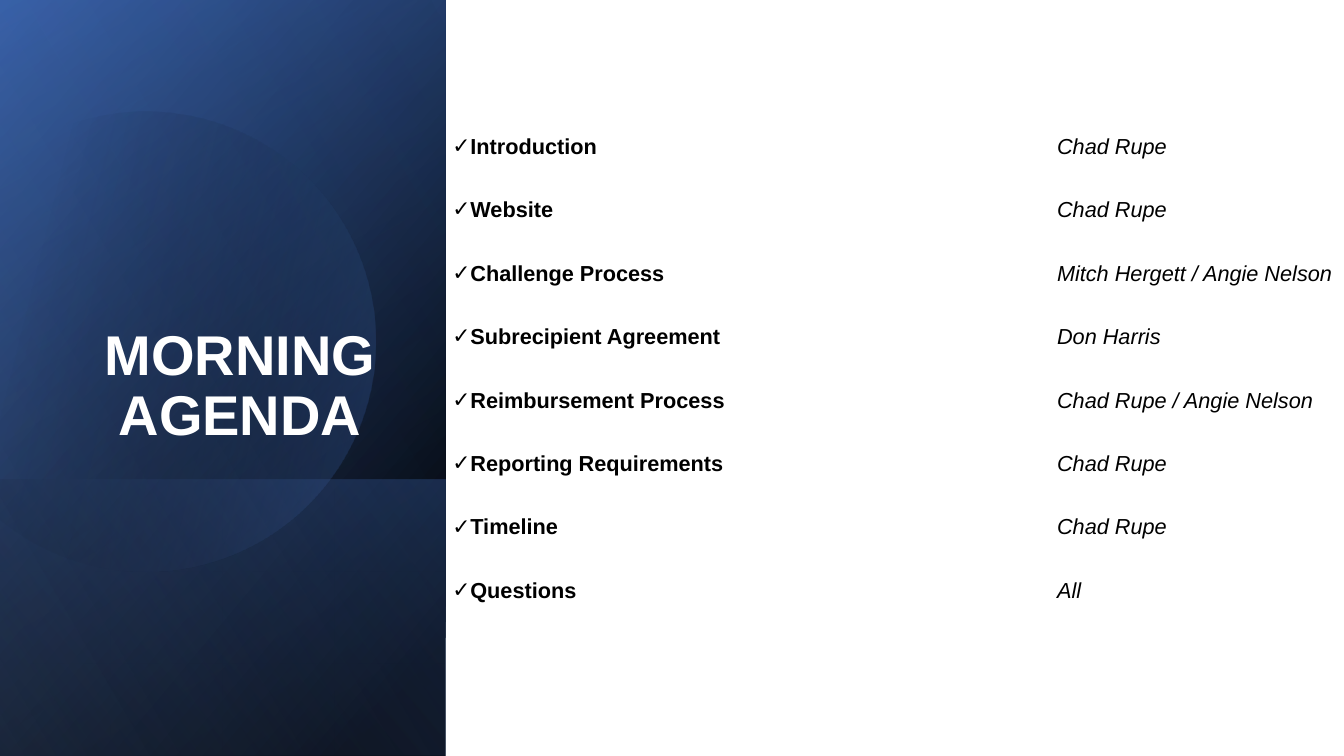
from math import cos, radians, sin, tan

from pptx import Presentation
from pptx.dml.color import RGBColor
from pptx.enum.shapes import MSO_SHAPE
from pptx.enum.text import MSO_ANCHOR, PP_ALIGN
from pptx.oxml.ns import qn
from pptx.oxml.xmlchemy import OxmlElement
from pptx.util import Cm, Pt

COLORS = {
    "black": "000000",
    "white": "FFFFFF",
    "navy": "2F5597",
    "blue": "4472C4",
    "pale": "8FAADC",
}
FONT = "Arial"
AGENDA = [
    ("Introduction", "Chad Rupe"),
    ("Website", "Chad Rupe"),
    ("Challenge Process", "Mitch Hergett / Angie Nelson"),
    ("Subrecipient Agreement", "Don Harris"),
    ("Reimbursement Process", "Chad Rupe / Angie Nelson"),
    ("Reporting Requirements", "Chad Rupe"),
    ("Timeline", "Chad Rupe"),
    ("Questions", "All"),
]


def add_child(parent, tag, **attributes):
    child = OxmlElement(tag)
    for name, value in attributes.items():
        child.set(name, str(value))
    parent.append(child)
    return child


def fill_gradient(sp, stops, angle):
    """Fill with two (percent, colour, opacity percent) stops; angle is clockwise."""
    sp.shadow.inherit = False
    sp.line.fill.background()
    sp.fill.gradient()
    sp.fill.gradient_angle = 360 - angle
    for stop, (percent, color, _) in zip(sp.fill.gradient_stops, stops):
        stop.position = percent / 100
        stop.color.rgb = RGBColor.from_string(COLORS[color])
    tints = sp._element.spPr.iter(qn("a:srgbClr"))
    for tint, (_, _, opacity) in zip(tints, stops):
        if opacity < 100:
            add_child(tint, "a:alpha", val=opacity * 1000)


def add_backdrop(slide, box):
    sp = slide.shapes.add_shape(MSO_SHAPE.RECTANGLE, *map(Cm, box))
    sp.shadow.inherit = False
    sp.line.fill.background()
    sp.fill.solid()
    sp.fill.fore_color.rgb = RGBColor.from_string(COLORS["white"])


def add_panel(slide, box, stops, angle):
    """Fill the box with a mirrored rectangle turned by a quarter."""
    left, top, width, height = box
    shift = (width - height) / 2
    sp = slide.shapes.add_shape(MSO_SHAPE.RECTANGLE, Cm(left + shift),
                                Cm(top - shift), Cm(height), Cm(width))
    sp.rotation = 90
    sp._element.spPr.find(qn("a:xfrm")).set("flipH", "1")
    fill_gradient(sp, stops, angle)


def arc_points(center, radius, start, end):
    """Give the two control points and the end point of a Bézier arc."""
    pull = 4 / 3 * tan(radians(end - start) / 4)

    def place(angle, along):
        a = radians(angle)
        return (center[0] + radius * (cos(a) - along * sin(a)),
                center[1] + radius * (sin(a) + along * cos(a)))

    return [place(start, pull), place(end, -pull), place(end, 0)]


def add_cut_disc(slide, center, radius, stops, angle):
    """Draw a disc that is cut off by the left edge of the slide."""
    turns = [242, 270, 360, 450, 510]
    points = [p for start, end in zip(turns, turns[1:])
              for p in arc_points(center, radius, start, end)]
    first = arc_points(center, radius, 0, turns[0])[-1]
    builder = slide.shapes.build_freeform(
        *(round(v * 1000) for v in first), scale=Cm(1) / 1000)
    builder.add_line_segments(
        [(round(x * 1000), round(y * 1000)) for x, y in points], close=True)
    sp = builder.convert_to_shape()
    lines = list(sp._element.iter(qn("a:lnTo")))
    for i in range(0, len(points), 3):
        curve = OxmlElement("a:cubicBezTo")
        lines[i].addprevious(curve)
        for line in lines[i:i + 3]:
            curve.append(line[0])
            line.getparent().remove(line)
    sp.rotation = 343.9
    fill_gradient(sp, stops, angle)


def add_sidebar(slide, box):
    left, top, width, height = box
    foot = 6.96
    add_panel(slide, box, [(8, "black", 100), (100, "navy", 100)], 50)
    add_panel(slide, box, [(0, "black", 0), (99, "blue", 46)], 30)
    add_panel(slide, (left, top + height - foot, width, foot),
              [(2, "blue", 29), (100, "black", 30)], 130)
    add_cut_disc(slide, (left + 3.65, top + 8.5), 5.8,
                 [(29, "black", 0), (100, "blue", 43)], 30)
    add_panel(slide, box, [(0, "black", 0), (99, "pale", 11)], 120)
    add_title(slide, (left + 1.6, top + 7.32, 8.89, 4.09))


def add_text_frame(slide, box, anchor):
    tf = slide.shapes.add_textbox(*map(Cm, box)).text_frame
    tf.word_wrap = True
    tf.vertical_anchor = anchor
    return tf


def add_run(p, text, size, color, bold=False, italic=False):
    r = p.add_run()
    r.text = text
    r.font.name = FONT
    r.font.size = Pt(size)
    r.font.bold = bold
    r.font.italic = italic
    r.font.color.rgb = RGBColor.from_string(COLORS[color])


def add_title(slide, box):
    p = add_text_frame(slide, box, MSO_ANCHOR.BOTTOM).paragraphs[0]
    p.alignment = PP_ALIGN.CENTER
    p.line_spacing = 0.9
    p.space_after = Pt(6)
    add_run(p, "MORNING AGENDA", 40, "white", bold=True)


def add_agenda(slide, box):
    tf = add_text_frame(slide, box, MSO_ANCHOR.MIDDLE)
    tf.margin_bottom = Cm(0.89)
    for i, (topic, speaker) in enumerate(AGENDA):
        p = tf.paragraphs[0] if i == 0 else tf.add_paragraph()
        p.line_spacing = 0.9
        p.space_after = Pt(28.6)
        pPr = p._p.get_or_add_pPr()
        pPr.set("marL", str(Cm(0.44)))
        pPr.set("indent", str(-Cm(0.44)))
        add_child(pPr, "a:buFont", typeface=FONT)
        add_child(pPr, "a:buChar", char="✓")
        tabs = add_child(pPr, "a:tabLst")
        add_child(tabs, "a:tab", pos=Cm(15.24), algn="l")
        add_run(p, topic + "\t", 15.5, "black", bold=True)
        add_run(p, speaker, 15.5, "black", italic=True)


def main():
    prs = Presentation()
    prs.slide_width, prs.slide_height = Cm(33.87), Cm(19.05)
    slide = prs.slides.add_slide(prs.slide_layouts[6])
    add_backdrop(slide, (0, 0, 33.87, 19.05))
    add_sidebar(slide, (0, 0, 11.23, 19.05))
    add_agenda(slide, (11.15, 2.44, 22.99, 14.5))
    prs.save("out.pptx")


if __name__ == "__main__":
    main()
